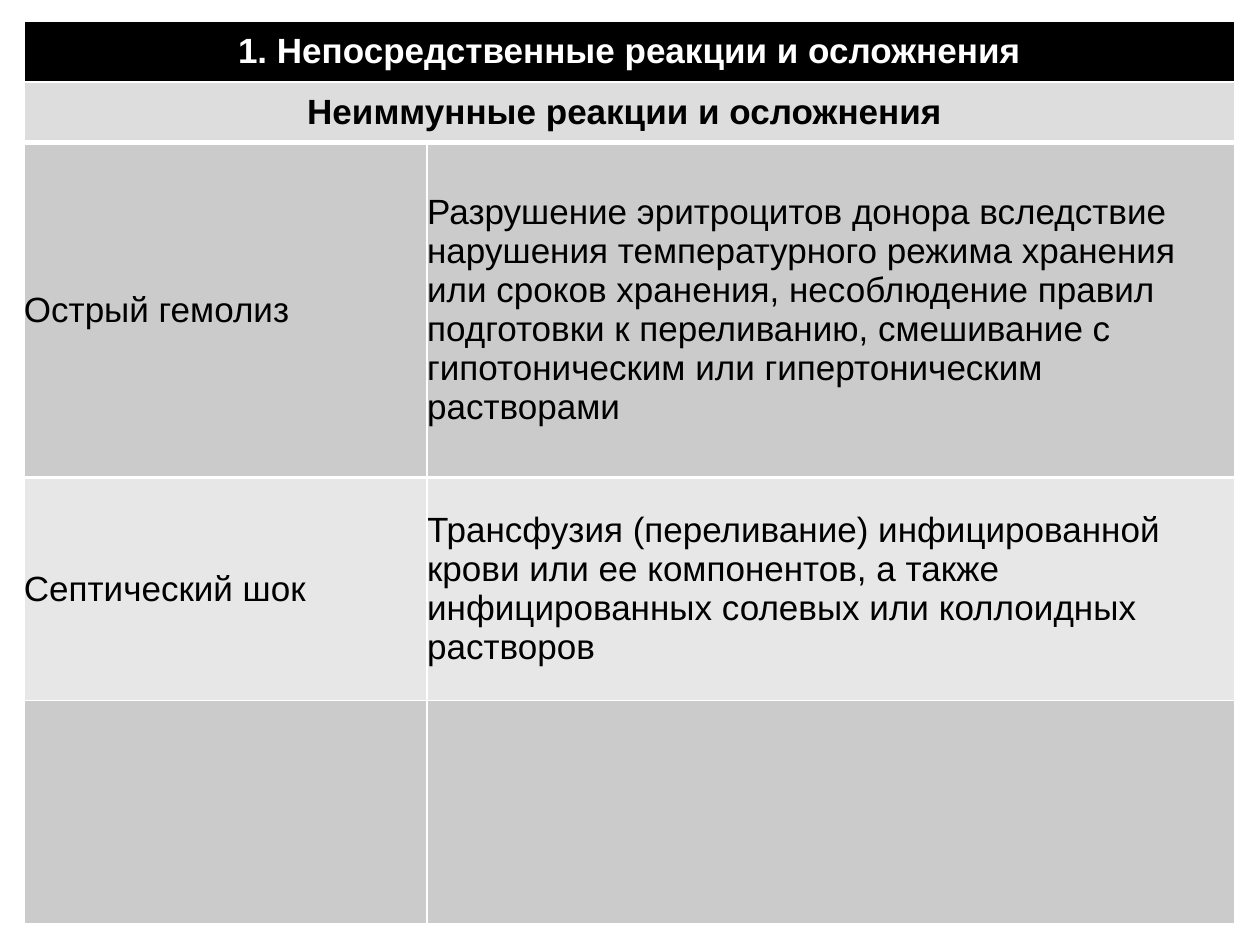
from lxml.etree import SubElement
from pptx import Presentation
from pptx.dml.color import RGBColor
from pptx.enum.text import MSO_ANCHOR as Anchor, PP_ALIGN as Align
from pptx.oxml.ns import qn
from pptx.util import Inches, Pt

# Content: height, fill, text colour, rule below in points, cell texts
ROWS = [
    (0.48, "000000", "FFFFFF", 1, ["1. Непосредственные реакции и осложнения"]),
    (0.48, "DDDDDD", "000000", 3, ["Неиммунные реакции и осложнения "]),
    (2.66, "CBCBCB", "000000", 2.25, [
        "Острый гемолиз",
        "Разрушение эритроцитов донора вследствие нарушения температурного "
        "режима хранения или сроков хранения, несоблюдение правил подготовки "
        "к переливанию, смешивание с гипотоническим или гипертоническим растворами"]),
    (1.77, "E7E7E7", "000000", 1, [
        "Септический шок",
        "Трансфузия (переливание) инфицированной крови или ее компонентов, "
        "а также инфицированных солевых или коллоидных растворов"]),
    (1.77, "CBCBCB", "000000", 1, ["", ""]),
]
COLUMNS = [3.2, 6.41]
LEFT, TOP = 0.19, 0.17


def color(value):
    return RGBColor.from_string(value)


def set_borders(cell, top, bottom):
    properties = cell._tc.get_or_add_tcPr()
    sides = [("a:lnL", 1), ("a:lnR", 1), ("a:lnT", top), ("a:lnB", bottom)]
    for index, (tag, width) in enumerate(sides):
        line = SubElement(properties, qn(tag), w=str(Pt(width)))
        fill = SubElement(line, qn("a:solidFill"))
        SubElement(fill, qn("a:srgbClr"), val="FFFFFF")
        properties.insert(index, line)


def write_cell(cell, text, text_color, heading):
    cell.vertical_anchor = Anchor.MIDDLE
    cell.margin_left = cell.margin_right = 0
    cell.margin_top = cell.margin_bottom = 0
    cell.text = text
    para = cell.text_frame.paragraphs[0]
    para.alignment = Align.CENTER if heading else Align.LEFT
    para.font.name = "Arial"
    para.font.size = Pt(20)
    para.font.bold = heading
    para.font.color.rgb = color(text_color)


deck = Presentation()
deck.slide_width, deck.slide_height = Inches(10), Inches(7.5)
page = deck.slides.add_slide(deck.slide_layouts[6])

# Table grid
height = sum(row[0] for row in ROWS)
table = page.shapes.add_table(
    len(ROWS), len(COLUMNS), Inches(LEFT), Inches(TOP),
    Inches(sum(COLUMNS)), Inches(height)).table
for column, width in zip(table.columns, COLUMNS):
    column.width = Inches(width)

# Rows: a single text spans both columns as a heading
rule_above = 1
for index, (row_height, fill, text_color, rule_below, texts) in enumerate(ROWS):
    table.rows[index].height = Inches(row_height)
    heading = len(texts) == 1
    if heading:
        table.cell(index, 0).merge(table.cell(index, 1))
    for cell in table.rows[index].cells:
        cell.fill.solid()
        cell.fill.fore_color.rgb = color(fill)
        set_borders(cell, rule_above, rule_below)
    for position, text in enumerate(texts):
        write_cell(table.cell(index, position), text, text_color, heading)
    rule_above = rule_below

deck.save("out.pptx")
